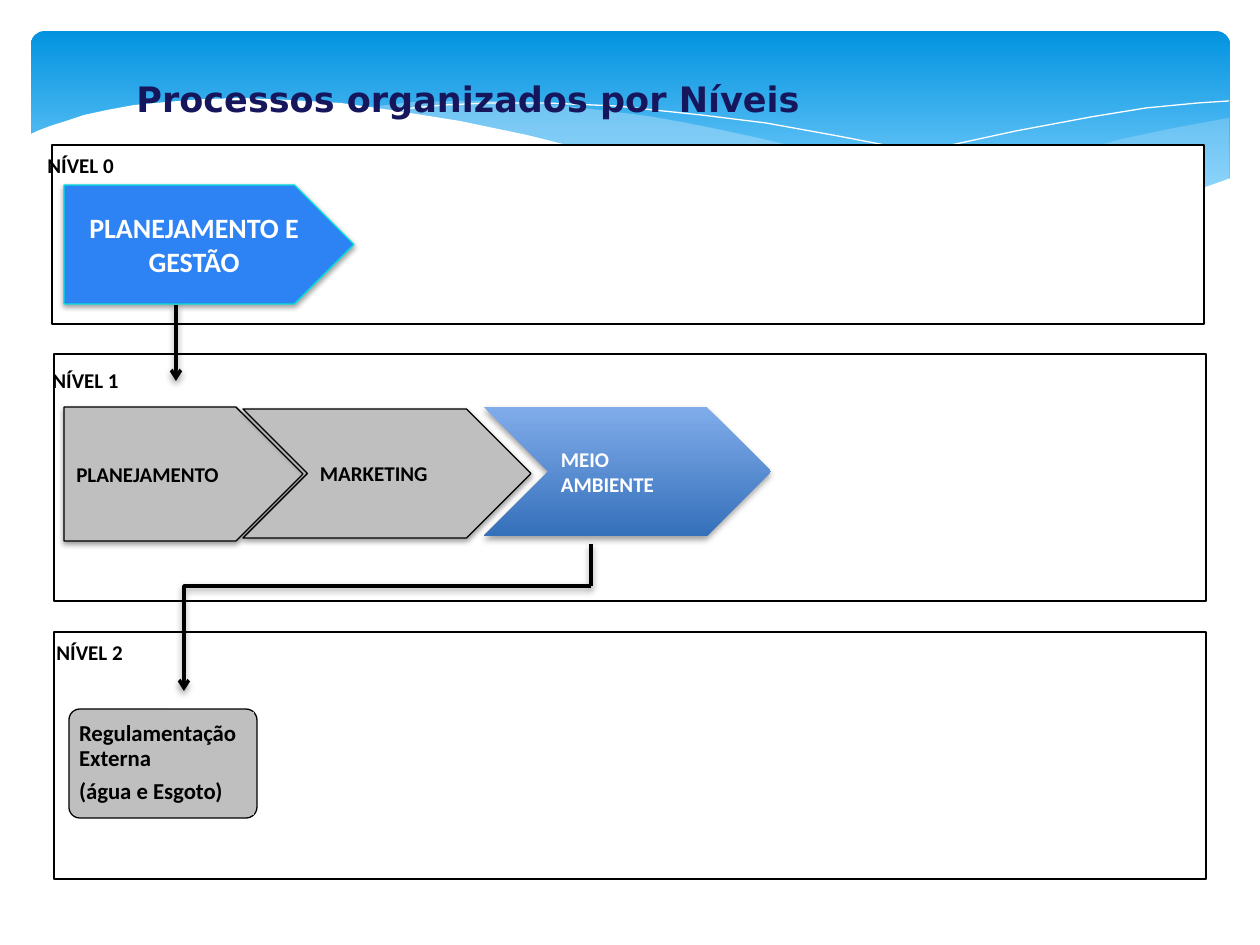
"""Build a slide showing processes organised in three levels."""
from lxml.etree import SubElement
from pptx import Presentation
from pptx.dml.color import RGBColor
from pptx.enum.shapes import MSO_CONNECTOR, MSO_SHAPE
from pptx.enum.text import MSO_ANCHOR, PP_ALIGN
from pptx.oxml.ns import qn
from pptx.util import Emu, Pt

SCALE = 914400 / 126
COLORS = {
    "white": "FFFFFF", "black": "000000", "gray": "BFBFBF", "navy": "16165D",
    "blue": "2D83F4", "cyan": "05E0DB", "mist": "C6E7FC",
    "sky_top": "0293E0", "sky_bottom": "83D3FE",
    "steel_top": "80ACEA", "steel_bottom": "3570BA",
}
color = {name: RGBColor.from_string(value) for name, value in COLORS.items()}


def add_text(shape, lines, size, ink, align=PP_ALIGN.LEFT, font="Calibri"):
    frame = shape.text_frame
    frame.word_wrap = True
    for index, line in enumerate(lines):
        paragraph = frame.add_paragraph() if index else frame.paragraphs[0]
        paragraph.alignment = align
        run = paragraph.add_run()
        run.text = line
        run.font.name = font
        run.font.size = Pt(size)
        run.font.bold = True
        run.font.color.rgb = color[ink]


def add_shadow(shape, blur, distance):
    effects = SubElement(shape.element.spPr, qn("a:effectLst"))
    shadow = SubElement(effects, qn("a:outerShdw"), blurRad=str(blur), dist=str(distance),
                        dir="5400000", rotWithShape="0")
    black = SubElement(shadow, qn("a:srgbClr"), val=COLORS["black"])
    SubElement(black, qn("a:alpha"), val="38000")


presentation = Presentation()
presentation.slide_width, presentation.slide_height = Emu(int(1260 * SCALE)), Emu(int(945 * SCALE))
slide = presentation.slides.add_slide(presentation.slide_layouts[6])
shapes = slide.shapes

banner = shapes.add_shape(MSO_SHAPE.ROUNDED_RECTANGLE,
                          *[Emu(int(n * SCALE)) for n in (31, 31, 1199, 197)])
banner.adjustments[0] = 0.07
banner.shadow.inherit = False
banner.line.fill.background()
banner.fill.gradient()
banner.fill.gradient_angle = 270
for stop, name, position in zip(banner.fill.gradient_stops, ("sky_top", "sky_bottom"), (0, 0.9)):
    stop.color.rgb = color[name]
    stop.position = position

right_wave = [
    (1229, 118), (1212, 121), (1174, 128), (1122, 139), (1085, 149), (1014, 165), (949, 180),
    (889, 191), (833, 202), (870, 207), (922, 211), (969, 215), (1012, 217), (1052, 216),
    (1088, 213), (1120, 209), (1150, 204), (1178, 197), (1205, 188), (1229, 179)]
middle_wave = [
    (1125, 210), (1091, 206), (1017, 194), (934, 179), (842, 159), (793, 146), (754, 137),
    (717, 129), (682, 122), (648, 116), (616, 112), (557, 105), (503, 101), (455, 101),
    (413, 102), (377, 106), (360, 108), (407, 113), (456, 122), (509, 133), (566, 146),
    (668, 170), (757, 189), (819, 199), (876, 208), (926, 213), (973, 217), (1017, 218),
    (1056, 217), (1092, 214)]
long_crest = [
    (389, 113), (413, 108), (445, 105), (488, 103), (546, 103), (616, 106), (701, 115),
    (766, 123), (838, 136), (916, 151), (1002, 171), (1095, 195), (1143, 209)]
right_crest = [
    (772, 190), (823, 178), (876, 164), (942, 147), (1016, 131), (1091, 117), (1146, 108),
    (1198, 103), (1229, 101)]
white_wave = [
    (1231, 178), (1197, 190), (1159, 200), (1118, 209), (1071, 213), (1019, 215), (959, 214),
    (892, 208), (816, 197), (730, 181), (633, 161), (563, 144), (527, 135), (460, 121),
    (398, 111), (341, 103), (290, 100), (243, 98), (203, 99), (166, 102), (134, 105),
    (107, 110), (84, 115), (66, 121), (50, 126), (37, 131), (29, 135), (29, 282), (1231, 282)]
for points, fill, opacity in (
        (right_wave, "mist", 29), (middle_wave, "mist", 40), (long_crest, None, None),
        (right_crest, None, None), (white_wave, "white", 100)):
    builder = shapes.build_freeform(*points[0], scale=SCALE)
    builder.add_line_segments(points[1:], close=fill is not None)
    wave = builder.convert_to_shape()
    wave.shadow.inherit = False
    if fill:
        wave.fill.solid()
        wave.fill.fore_color.rgb = color[fill]
        tint = wave.element.spPr.find(qn("a:solidFill")).find(qn("a:srgbClr"))
        SubElement(tint, qn("a:alpha"), val=str(opacity * 1000))
        wave.line.fill.background()
    else:
        wave.fill.background()
        wave.line.color.rgb = color["white"]
        wave.line.width = Pt(0)

for left, top, height in ((52, 145, 179), (54, 354, 247), (54, 632, 247)):
    level = shapes.add_shape(MSO_SHAPE.RECTANGLE,
                             *[Emu(int(n * SCALE)) for n in (left, top, 1152, height)])
    level.shadow.inherit = False
    level.fill.solid()
    level.fill.fore_color.rgb = color["white"]
    level.line.color.rgb = color["black"]
    level.line.width = Pt(1.25)

for box, text, size, ink, font in (
        ((35, 146, 120, 38), "NÍVEL 0", 12, "black", "Calibri"),
        ((40, 361, 120, 38), "NÍVEL 1", 12, "black", "Calibri"),
        ((44, 633, 120, 38), "NÍVEL 2", 12, "black", "Calibri"),
        ((124, 71, 992, 55), "Processos organizados por Níveis", 20, "navy", "DejaVu Sans")):
    label = shapes.add_textbox(*[Emu(int(n * SCALE)) for n in box])
    add_text(label, [text], size, ink, font=font)

for kind, box, fill, line, text, size, ink, align in (
        (MSO_SHAPE.PENTAGON, (64, 407, 239, 134), "gray", "black",
         "PLANEJAMENTO", 12, "black", PP_ALIGN.LEFT),
        (MSO_SHAPE.CHEVRON, (243, 409, 288, 129), "gray", "black",
         "MARKETING", 12, "black", PP_ALIGN.LEFT),
        (MSO_SHAPE.PENTAGON, (64, 185, 290, 119), "blue", "cyan",
         "PLANEJAMENTO E GESTÃO", 16, "white", PP_ALIGN.CENTER),
        (MSO_SHAPE.CHEVRON, (484, 407, 287, 129), None, None,
         "MEIO AMBIENTE", 12, "white", PP_ALIGN.LEFT)):
    process = shapes.add_shape(kind, *[Emu(int(n * SCALE)) for n in box])
    if fill:
        process.fill.solid()
        process.fill.fore_color.rgb = color[fill]
        process.line.color.rgb = color[line]
        process.line.width = Pt(0.75)
        add_shadow(process, 40000, 20000)
    else:
        process.fill.gradient()
        process.fill.gradient_angle = 270
        for stop, name in zip(process.fill.gradient_stops, ("steel_top", "steel_bottom")):
            stop.color.rgb = color[name]
        process.line.fill.background()
        add_shadow(process, 50800, 25400)
    process.text_frame.vertical_anchor = MSO_ANCHOR.MIDDLE
    add_text(process, [text], size, ink, align)

for kind, ends, has_arrow in (
        (MSO_CONNECTOR.STRAIGHT, (176, 305, 176, 381), True),
        (MSO_CONNECTOR.ELBOW, (591, 586, 184, 691), True),
        (MSO_CONNECTOR.STRAIGHT, (591, 544, 591, 586), False)):
    connector = shapes.add_connector(kind, *[Emu(int(n * SCALE)) for n in ends])
    connector.line.color.rgb = color["black"]
    connector.line.width = Pt(2)
    properties = connector.element.spPr
    if kind == MSO_CONNECTOR.ELBOW:
        guides = properties.find(qn("a:prstGeom")).find(qn("a:avLst"))
        SubElement(guides, qn("a:gd"), name="adj1", fmla="val 100000")
    if has_arrow:
        SubElement(properties.find(qn("a:ln")), qn("a:tailEnd"), type="arrow")
    add_shadow(connector, 50800, 25400)

card = shapes.add_shape(MSO_SHAPE.ROUNDED_RECTANGLE,
                        *[Emu(int(n * SCALE)) for n in (69, 709, 188, 109)])
card.adjustments[0] = 0.1
card.line.color.rgb = color["black"]
card.line.width = Pt(0.75)
card_text = shapes.add_shape(MSO_SHAPE.RECTANGLE,
                             *[Emu(int(n * SCALE)) for n in (73, 712, 181, 103)])
card_text.line.fill.background()
for shape in (card, card_text):
    shape.shadow.inherit = False
    shape.fill.solid()
    shape.fill.fore_color.rgb = color["gray"]
frame = card_text.text_frame
frame.vertical_anchor = MSO_ANCHOR.MIDDLE
frame.margin_left = frame.margin_right = frame.margin_top = frame.margin_bottom = Emu(int(6 * SCALE))
add_text(card_text, ["Regulamentação Externa", "(água e Esgoto)"], 13, "black")
for paragraph in frame.paragraphs:
    paragraph.line_spacing = 0.9
    paragraph.space_after = Pt(5)

presentation.save("out.pptx")
